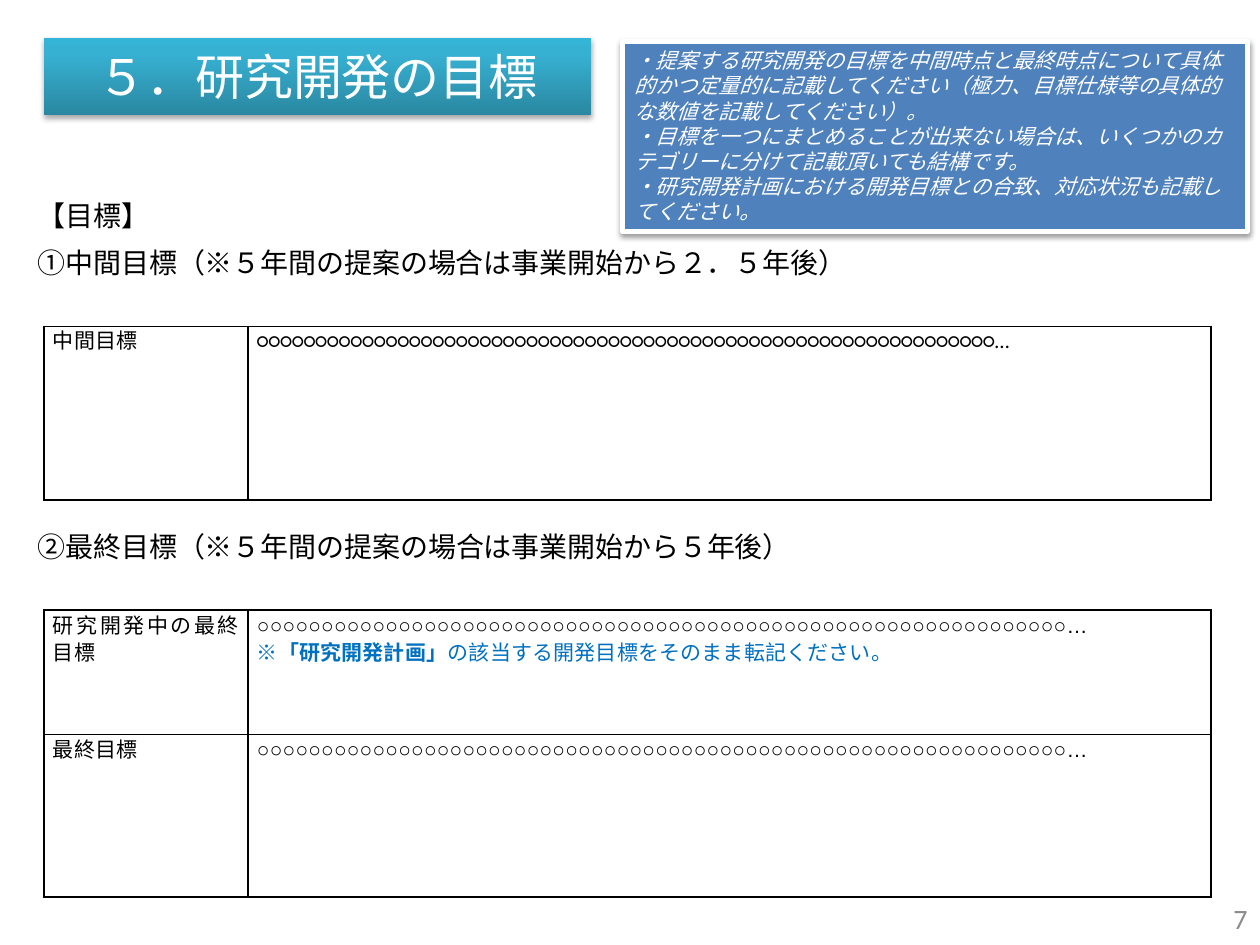
from dataclasses import dataclass

from lxml import etree
from pptx import Presentation
from pptx.dml.color import RGBColor
from pptx.enum.shapes import MSO_SHAPE
from pptx.enum.text import MSO_ANCHOR, MSO_AUTO_SIZE, PP_ALIGN
from pptx.oxml.ns import qn
from pptx.util import Inches, Pt

RECTANGLE = MSO_SHAPE.RECTANGLE
TOP, MIDDLE = MSO_ANCHOR.TOP, MSO_ANCHOR.MIDDLE
LEFT, CENTER, RIGHT, JUSTIFY = PP_ALIGN.LEFT, PP_ALIGN.CENTER, PP_ALIGN.RIGHT, PP_ALIGN.JUSTIFY
GROW = MSO_AUTO_SIZE.SHAPE_TO_FIT_TEXT


@dataclass(frozen=True)
class Theme:
    black: str = "000000"
    white: str = "FFFFFF"
    gray: str = "8C8C8C"
    callout: str = "4F81BD"
    note: str = "0070C0"
    title_gradient: tuple = ((0, "2A88A2"), (80, "37B1D2"), (100, "34B4D6"))
    sans: str = "Arial"
    body: str = "Calibri"
    title_size: int = 28
    heading_size: int = 16
    text_size: int = 12
    line_spacing: float = 15.8


def add_element(parent, tag, **attributes):
    element = etree.SubElement(parent, qn(tag))
    for name, value in attributes.items():
        element.set(name, str(value))
    return element


class SlideBuilder:
    def __init__(self, slide, theme):
        self.slide = slide
        self.theme = theme

    def format_paragraph(self, paragraph, size, color, name, align=LEFT, italic=None):
        paragraph.alignment = align
        font = paragraph.font
        font.size = Pt(size)
        font.italic = italic
        font.name = name
        font.color.rgb = RGBColor.from_string(color)
        properties = paragraph._p.pPr.find(qn("a:defRPr"))
        add_element(properties, "a:ea", typeface=name)
        return properties

    def fill_text(self, frame, lines, anchor, **style):
        frame.word_wrap = True
        frame.vertical_anchor = anchor
        for index, line in enumerate(lines):
            paragraph = frame.add_paragraph() if index else frame.paragraphs[0]
            paragraph.add_run().text = line
            self.format_paragraph(paragraph, **style)

    def text(self, box, line, anchor=TOP, **style):
        shape = self.slide.shapes.add_textbox(*map(Inches, box))
        self.fill_text(shape.text_frame, [line], anchor, **style)
        return shape

    def heading(self, box, line):
        shape = self.text(box, line, size=self.theme.heading_size,
                          color=self.theme.black, name=self.theme.sans)
        shape.text_frame.auto_size = GROW

    def panel(self, box, lines, anchor, shadow_alpha, shadow_distance, **style):
        """Add a borderless rectangle with text and a soft shadow below it."""
        shape = self.slide.shapes.add_shape(RECTANGLE, *map(Inches, box))
        shape.line.fill.background()
        shape.shadow.inherit = False
        effects = shape._element.spPr.find(qn("a:effectLst"))
        shadow = add_element(effects, "a:outerShdw", blurRad=Pt(3.1),
                             dist=Pt(shadow_distance), dir=90 * 60000, rotWithShape=0)
        color = add_element(shadow, "a:srgbClr", val=self.theme.black)
        add_element(color, "a:alpha", val=shadow_alpha * 1000)
        self.fill_text(shape.text_frame, lines, anchor, color=self.theme.white,
                       name=self.theme.sans, **style)
        return shape

    def title(self, box, line):
        shape = self.panel(box, [line], MIDDLE, 35, 1.8,
                           size=self.theme.title_size, align=CENTER)
        shape.fill.gradient()
        shape.fill.gradient_angle = 90
        stops = shape._element.spPr.find(qn("a:gradFill")).find(qn("a:gsLst"))
        for stop in list(stops):
            stops.remove(stop)
        for position, value in self.theme.title_gradient:
            stop = add_element(stops, "a:gs", pos=position * 1000)
            add_element(stop, "a:srgbClr", val=value)

    def callout(self, box, lines):
        shape = self.panel(box, lines, TOP, 38, 1.6, size=self.theme.text_size, italic=True)
        shape.fill.solid()
        shape.fill.fore_color.rgb = RGBColor.from_string(self.theme.callout)
        shape.line.color.rgb = RGBColor.from_string(self.theme.white)
        shape.line.width = Pt(3)

    def border_cell(self, cell):
        properties = cell._tc.get_or_add_tcPr()
        for side in ("L", "R", "T", "B"):
            line = add_element(properties, f"a:ln{side}", w=Pt(1))
            fill = add_element(line, "a:solidFill")
            add_element(fill, "a:srgbClr", val=self.theme.black)
        cell.fill.background()

    def fill_cell(self, cell, lines, name):
        """Write lines of (text, bold) runs; lines after the first are notes."""
        cell.margin_left = cell.margin_right = Inches(0.07)
        cell.margin_top = cell.margin_bottom = 0
        self.border_cell(cell)
        for index, runs in enumerate(lines):
            paragraph = cell.text_frame.add_paragraph() if index else cell.text_frame.paragraphs[0]
            paragraph.line_spacing = Pt(self.theme.line_spacing)
            for text, bold in runs:
                run = paragraph.add_run()
                run.text = text
                run.font.bold = bold
            color = self.theme.note if index else self.theme.black
            properties = self.format_paragraph(paragraph, self.theme.text_size,
                                               color, name, JUSTIFY)
            properties.set("spc", "10")

    def goal_table(self, top, row_heights, rows, name):
        widths = (1.62, 7.64)
        box = (0.35, top, sum(widths), sum(row_heights))
        table = self.slide.shapes.add_table(len(rows), len(widths), *map(Inches, box)).table
        table.first_row = table.horz_banding = False
        for column, width in zip(table.columns, widths):
            column.width = Inches(width)
        for row, height, contents in zip(table.rows, row_heights, rows):
            row.height = Inches(height)
            for cell, lines in zip(row.cells, contents):
                self.fill_cell(cell, lines, name)


def main():
    theme = Theme()
    presentation = Presentation()
    presentation.slide_width, presentation.slide_height = Inches(10), Inches(7.5)
    slide = presentation.slides.add_slide(presentation.slide_layouts[6])
    builder = SlideBuilder(slide, theme)

    builder.title((0.35, 0.3, 4.34, 0.61), "５．研究開発の目標")
    builder.callout((4.94, 0.33, 4.96, 1.51), [
        "・提案する研究開発の目標を中間時点と最終時点について具体的かつ定量的に記載してください"
        "（極力、目標仕様等の具体的な数値を記載してください）。",
        "・目標を一つにまとめることが出来ない場合は、いくつかのカテゴリーに分けて記載頂いても結構です。",
        "・研究開発計画における開発目標との合致、対応状況も記載してください。",
    ])
    builder.heading((0.2, 1.53, 2.91, 0.37), "【目標】")
    builder.heading((0.2, 1.9, 9.53, 0.37), "①中間目標（※５年間の提案の場合は事業開始から２．５年後）")
    builder.heading((0.2, 4.15, 9.42, 0.37), "②最終目標（※５年間の提案の場合は事業開始から５年後）")

    blank_goal = [("○" * 63 + "…", False)]
    plan_note = [("※", False), ("「研究開発計画」", True),
                 ("の該当する開発目標をそのまま転記ください。", False)]
    builder.goal_table(2.59, [1.38], [
        ([[("中間目標", False)]], [blank_goal]),
    ], theme.body)
    builder.goal_table(4.84, [0.99, 1.29], [
        ([[("研究開発中の最終目標", False)]], [blank_goal, plan_note]),
        ([[("最終目標", False)]], [blank_goal]),
    ], theme.sans)
    builder.text((7.67, 7.09, 2.33, 0.4), "7", MIDDLE, size=theme.heading_size,
                 color=theme.gray, name=theme.body, align=RIGHT)
    presentation.save("out.pptx")


if __name__ == "__main__":
    main()
